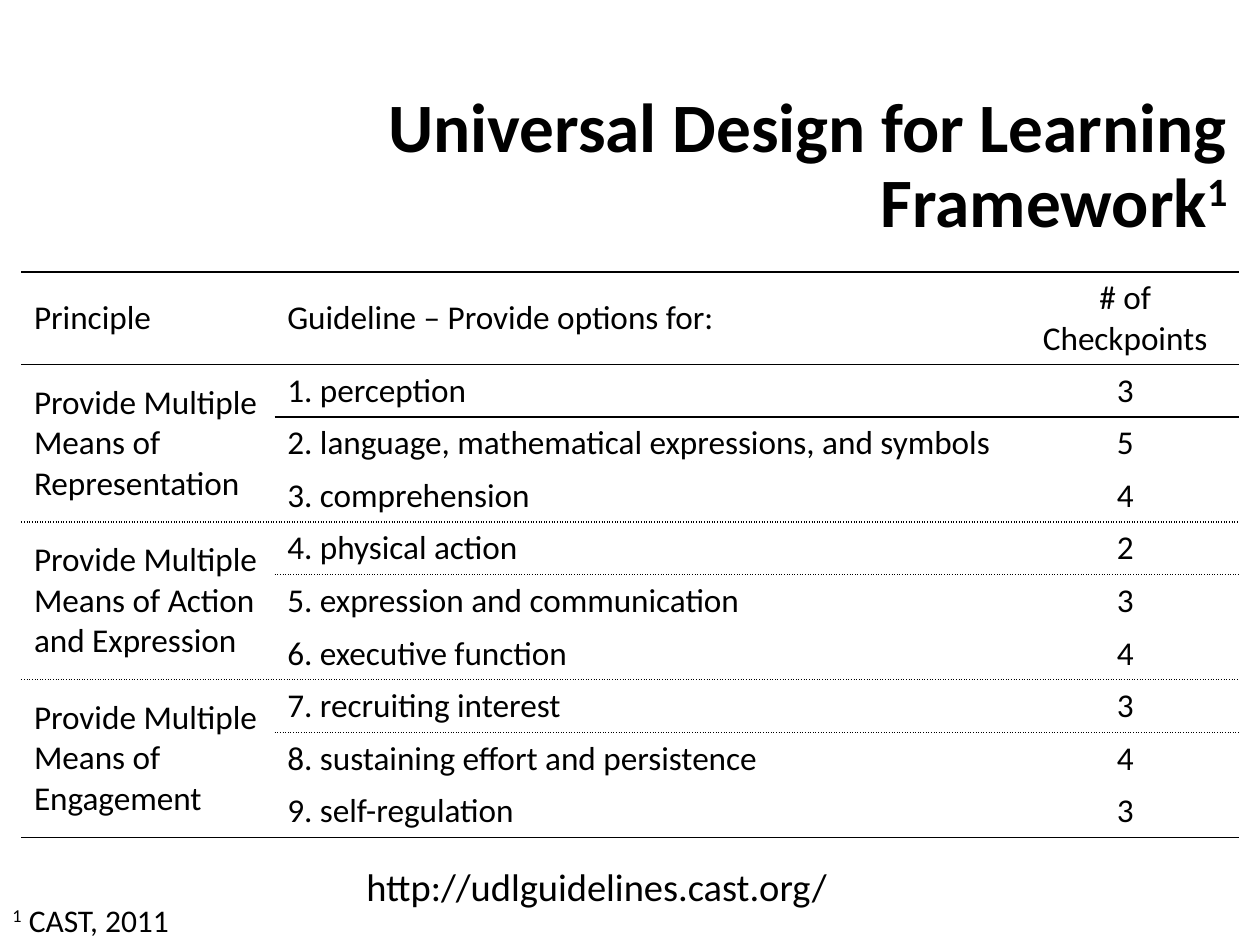
"""Build the Universal Design for Learning framework slide."""
from lxml import etree
from pptx import Presentation
from pptx.dml.color import RGBColor
from pptx.enum.text import MSO_ANCHOR, PP_ALIGN
from pptx.oxml.ns import qn
from pptx.util import Pt

BLACK = RGBColor(0, 0, 0)
FONT = "Calibri"
LEFT, CENTER, RIGHT = PP_ALIGN.LEFT, PP_ALIGN.CENTER, PP_ALIGN.RIGHT
TOP, MIDDLE = MSO_ANCHOR.TOP, MSO_ANCHOR.MIDDLE
SOLID, DOTTED = "solid", "sysDot"

HEADERS = ["Principle", "Guideline – Provide options for:", "# of Checkpoints"]
PRINCIPLES = [
    ("Provide Multiple Means of Representation", SOLID, [
        ("1. perception", 3),
        ("2. language, mathematical expressions, and symbols", 5),
        ("3. comprehension", 4)]),
    ("Provide Multiple Means of Action and Expression", DOTTED, [
        ("4. physical action", 2),
        ("5. expression and communication", 3),
        ("6. executive function", 4)]),
    ("Provide Multiple Means of Engagement", DOTTED, [
        ("7. recruiting interest", 3),
        ("8. sustaining effort and persistence", 4),
        ("9. self-regulation", 3)]),
]
WIDTHS = [144.72, 421.2, 129.6]
ROW_HEIGHT = 29.5


def add_run(p, text, size, bold=False, raised=False):
    """Add one styled run to a paragraph."""
    r = p.add_run()
    r.text = text
    r.font.name, r.font.size, r.font.bold = FONT, Pt(size), bold
    r.font.color.rgb = BLACK
    if raised:
        r.font._element.set("baseline", "30000")


def add_text(s, box, wrap=False, anchor=TOP):
    """Add a text box and return its first paragraph."""
    tf = s.shapes.add_textbox(*map(Pt, box)).text_frame
    tf.word_wrap, tf.vertical_anchor = wrap, anchor
    return tf.paragraphs[0]


def set_borders(cell, top, bottom):
    """Draw the horizontal borders of a cell and clear the vertical ones."""
    tcPr = cell._tc.get_or_add_tcPr()
    for side, dash in (("L", None), ("R", None), ("T", top), ("B", bottom)):
        ln = etree.SubElement(tcPr, qn(f"a:ln{side}"), w=str(Pt(1)))
        if dash:
            fill = etree.SubElement(ln, qn("a:solidFill"))
            etree.SubElement(fill, qn("a:srgbClr"), val=str(BLACK))
            etree.SubElement(ln, qn("a:prstDash"), val=dash)
        else:
            etree.SubElement(ln, qn("a:noFill"))


def fill_cell(cell, text, top, bottom, align=LEFT, anchor=TOP):
    """Give a cell its borders and text."""
    set_borders(cell, top, bottom)
    cell.fill.background()
    cell.vertical_anchor = anchor
    p = cell.text_frame.paragraphs[0]
    p.alignment = align
    if text:
        add_run(p, text, 19)


def add_framework_table(s):
    """Add the table of principles, guidelines and checkpoints."""
    rows = 1 + sum(len(items) for _, _, items in PRINCIPLES)
    table = s.shapes.add_table(rows, len(WIDTHS), Pt(12.24), Pt(155.52),
                               Pt(sum(WIDTHS)), Pt(rows * ROW_HEIGHT)).table
    table.first_row = table.horz_banding = False
    for column, width in zip(table.columns, WIDTHS):
        column.width = Pt(width)
    for row in table.rows:
        row.height = Pt(ROW_HEIGHT)
    for col, text in enumerate(HEADERS):
        last = col == len(HEADERS) - 1
        fill_cell(table.cell(0, col), text, SOLID, SOLID,
                  CENTER if last else LEFT, TOP if last else MIDDLE)

    closing = [dash for _, dash, _ in PRINCIPLES[1:]] + [SOLID]
    first = 1
    for (principle, opening, items), end in zip(PRINCIPLES, closing):
        edges = [opening, opening] + [None] * (len(items) - 2) + [end]
        for i, (guideline, count) in enumerate(items):
            row, top, bottom = first + i, edges[i], edges[i + 1]
            fill_cell(table.cell(row, 1), guideline, top, bottom)
            fill_cell(table.cell(row, 2), str(count), top, bottom, CENTER)
            if i:
                fill_cell(table.cell(row, 0), "", None, bottom if bottom == end and i == len(items) - 1 else None)
        origin = table.cell(first, 0)
        fill_cell(origin, principle, opening, end, anchor=MIDDLE)
        origin.merge(table.cell(first + len(items) - 1, 0))
        first += len(items)


def main():
    """Build and save the slide."""
    prs = Presentation()
    prs.slide_width, prs.slide_height = Pt(720), Pt(540)
    s = prs.slides.add_slide(prs.slide_layouts[6])

    p = add_text(s, (15.84, 61.2, 692.64, 69.12), wrap=True, anchor=MIDDLE)
    p.alignment, p.line_spacing = RIGHT, 0.9
    add_run(p, "Universal Design for Learning Framework", 39.6, bold=True)
    add_run(p, "1", 39.6, bold=True, raised=True)

    add_framework_table(s)

    p = add_text(s, (202.32, 489.6, 280.8, 33.84))
    add_run(p, "http://udlguidelines.cast.org/", 22)
    p = add_text(s, (0, 511.2, 108.72, 28.8))
    add_run(p, "1", 18, raised=True)
    add_run(p, " CAST, 2011", 18)
    prs.save("out.pptx")


if __name__ == "__main__":
    main()
